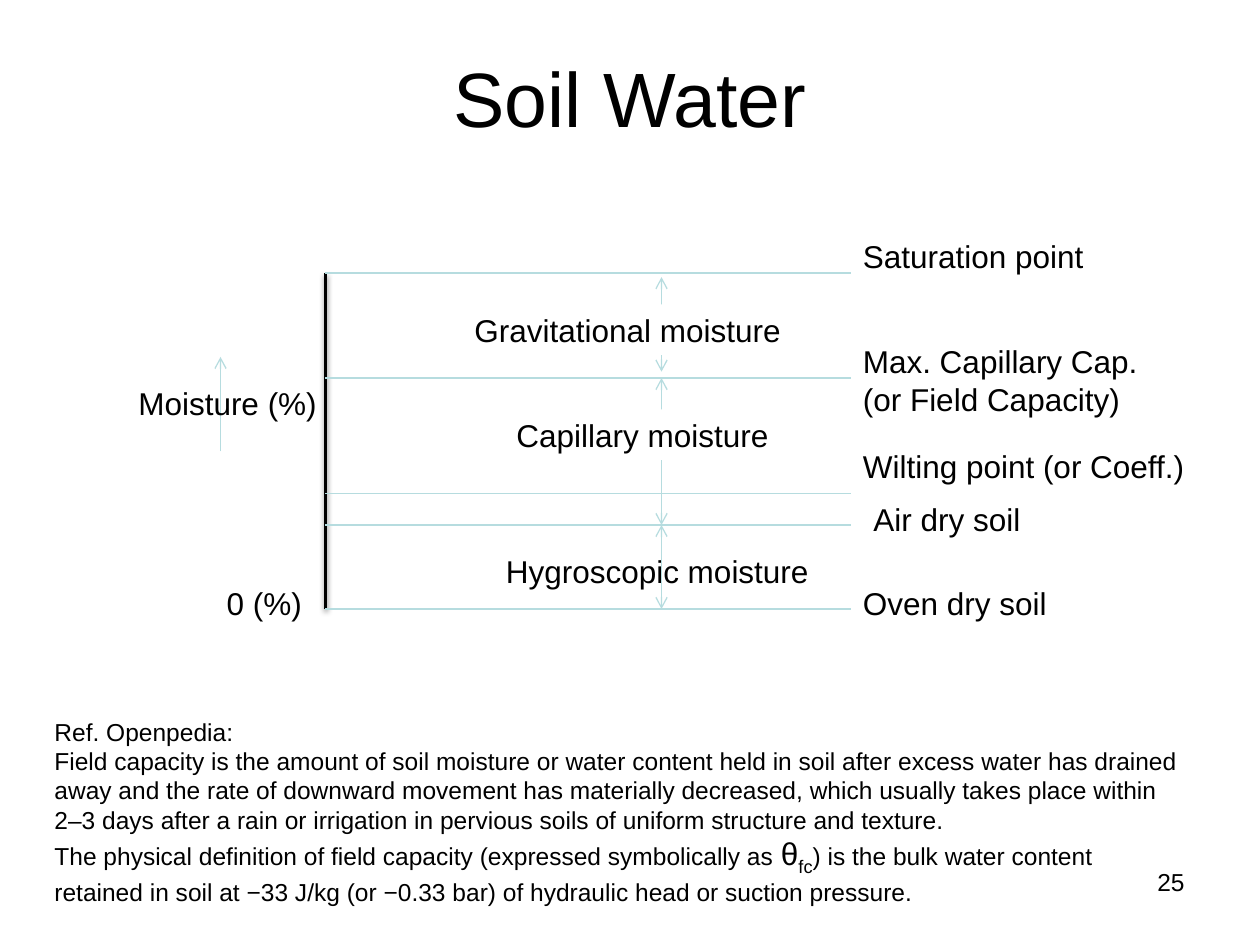
from lxml.etree import SubElement
from pptx import Presentation
from pptx.dml.color import RGBColor
from pptx.enum.shapes import MSO_CONNECTOR as CONN, MSO_SHAPE as SHAPE
from pptx.enum.text import MSO_ANCHOR as ANCHOR, MSO_AUTO_SIZE as AUTO, PP_ALIGN as ALIGN
from pptx.oxml.ns import qn
from pptx.util import Inches, Pt

BLACK = RGBColor(0x00, 0x00, 0x00)
WHITE = RGBColor(0xFF, 0xFF, 0xFF)
TEAL = RGBColor(0xB6, 0xDC, 0xDF)
FONT = "Arial"
CELLS_PER_INCH = 12
ROW_H = 4.8
AXIS_X, LEVEL_END, RANGE_X = 31, 81, 63
SATURATION, FIELD_CAPACITY, WILTING, AIR_DRY, OVEN_DRY = 26, 36, 47, 50, 58

LABELS = [
    ("Oven dry soil", 81, 55, 19.9, ROW_H),
    ("Max. Capillary Cap.\n(or Field Capacity)", 81, 32, 28.6, 8.4),
    ("Wilting point (or Coeff.)", 81, 42, 33.1, ROW_H),
    ("Air dry soil", 82, 47, 16.4, ROW_H),
    ("Saturation point", 81, 22, 23.4, ROW_H),
]
AXIS_LABELS = [
    ("Moisture (%)", 12, 36, 19.4, ROW_H),
    ("0 (%)", 20.4, 55, 9.6, ROW_H),
]
REFERENCE = [
    [("Ref. Openpedia:", 14)],
    [("Field capacity is the amount of soil moisture or water content held in soil after "
      "excess water has drained away and the rate of downward movement has materially "
      "decreased, which usually takes place within 2–3 days after a rain or irrigation in "
      "pervious soils of uniform structure and texture.", 14)],
    [("The physical definition of field capacity (expressed symbolically as ", 14),
     ("θ", 18),
     ("fc", 18),
     (") is the bulk water content retained in soil at −33 J/kg (or −0.33 bar) of "
      "hydraulic head or suction pressure.", 14)],
]


def cells(*values):
    return [Inches(v / CELLS_PER_INCH) for v in values]


def format_run(r, size):
    r.font.name, r.font.size = FONT, Pt(size)
    r.font.color.rgb = BLACK


def fill_text(tf, text, size, align=ALIGN.LEFT):
    tf.text = text
    for p in tf.paragraphs:
        p.alignment = align
        for r in p.runs:
            format_run(r, size)


def add_title(s, text):
    title = s.shapes.title
    title.left, title.top, title.width, title.height = cells(6, 4, 108, 10.5)
    title.text_frame.vertical_anchor = ANCHOR.MIDDLE
    fill_text(title.text_frame, text, 44, ALIGN.CENTER)


def add_label(s, text, x, y, w, h, size=18, align=ALIGN.LEFT, wrap=False):
    sp = s.shapes.add_textbox(*cells(x, y, w, h))
    tf = sp.text_frame
    tf.word_wrap = wrap
    fill_text(tf, text, size, align)
    return tf


def add_range_box(s, text, x, y, w, wrap=True):
    sp = s.shapes.add_shape(SHAPE.RECTANGLE, *cells(x, y, w, ROW_H))
    sp.shadow.inherit = False
    sp.fill.solid()
    sp.fill.fore_color.rgb = WHITE
    sp.line.fill.background()
    tf = sp.text_frame
    tf.word_wrap = wrap
    tf.vertical_anchor = ANCHOR.TOP
    fill_text(tf, text, 18)


def add_line(s, x1, y1, x2, y2, color=TEAL, width=0.75, arrows=()):
    line = s.shapes.add_connector(CONN.STRAIGHT, *cells(x1, y1, x2, y2))
    line.line.color.rgb = color
    line.line.width = Pt(width)
    for end in arrows:
        SubElement(line.line._get_or_add_ln(), qn(f"a:{end}"), type="arrow")
    return SubElement(line._element.spPr, qn("a:effectLst"))


def add_range(s, top, bottom):
    add_line(s, RANGE_X, top, RANGE_X, bottom, arrows=("headEnd", "tailEnd"))


def add_axis(s):
    effects = add_line(s, AXIS_X, SATURATION, AXIS_X, OVEN_DRY, BLACK, 2)
    shadow = SubElement(effects, qn("a:outerShdw"), blurRad=str(Pt(3.1)),
                        dist=str(Pt(1.6)), dir="5400000", rotWithShape="0")
    color = SubElement(shadow, qn("a:srgbClr"), val=str(BLACK))
    SubElement(color, qn("a:alpha"), val="38000")


def add_reference(s):
    tf = add_label(s, "", 4, 67.8, 110, 19, wrap=True)
    tf.vertical_anchor = ANCHOR.MIDDLE
    tf.auto_size = AUTO.SHAPE_TO_FIT_TEXT
    for i, runs in enumerate(REFERENCE):
        p = tf.add_paragraph() if i else tf.paragraphs[0]
        for text, size in runs:
            r = p.add_run()
            r.text = text
            format_run(r, size)
            if text == "fc":
                r.font._element.set("baseline", "-25000")


def main():
    prs = Presentation()
    prs.slide_width, prs.slide_height = Inches(10), Inches(7.5)
    s = prs.slides.add_slide(prs.slide_layouts[5])
    add_title(s, "Soil Water")
    add_axis(s)
    for y in (SATURATION, WILTING, FIELD_CAPACITY, AIR_DRY, OVEN_DRY):
        add_line(s, AXIS_X, y, LEVEL_END, y)
    for label in LABELS:
        add_label(s, *label)
    add_range(s, SATURATION + 0.4, FIELD_CAPACITY - 0.6)
    add_range_box(s, "Hygroscopic moisture", 47, 52, 31.2, wrap=False)
    add_range(s, FIELD_CAPACITY, AIR_DRY)
    add_range_box(s, "Capillary moisture", 48, 39, 31.6)
    add_range(s, AIR_DRY, OVEN_DRY)
    add_range_box(s, "Gravitational moisture", 44, 29, 34)
    add_line(s, 21, 43, 21, 34, arrows=("tailEnd",))
    for label in AXIS_LABELS:
        add_label(s, *label)
    add_reference(s)
    add_label(s, "25", 86, 82, 28, 6.2, 14, ALIGN.RIGHT, True)
    prs.save("out.pptx")


if __name__ == "__main__":
    main()
